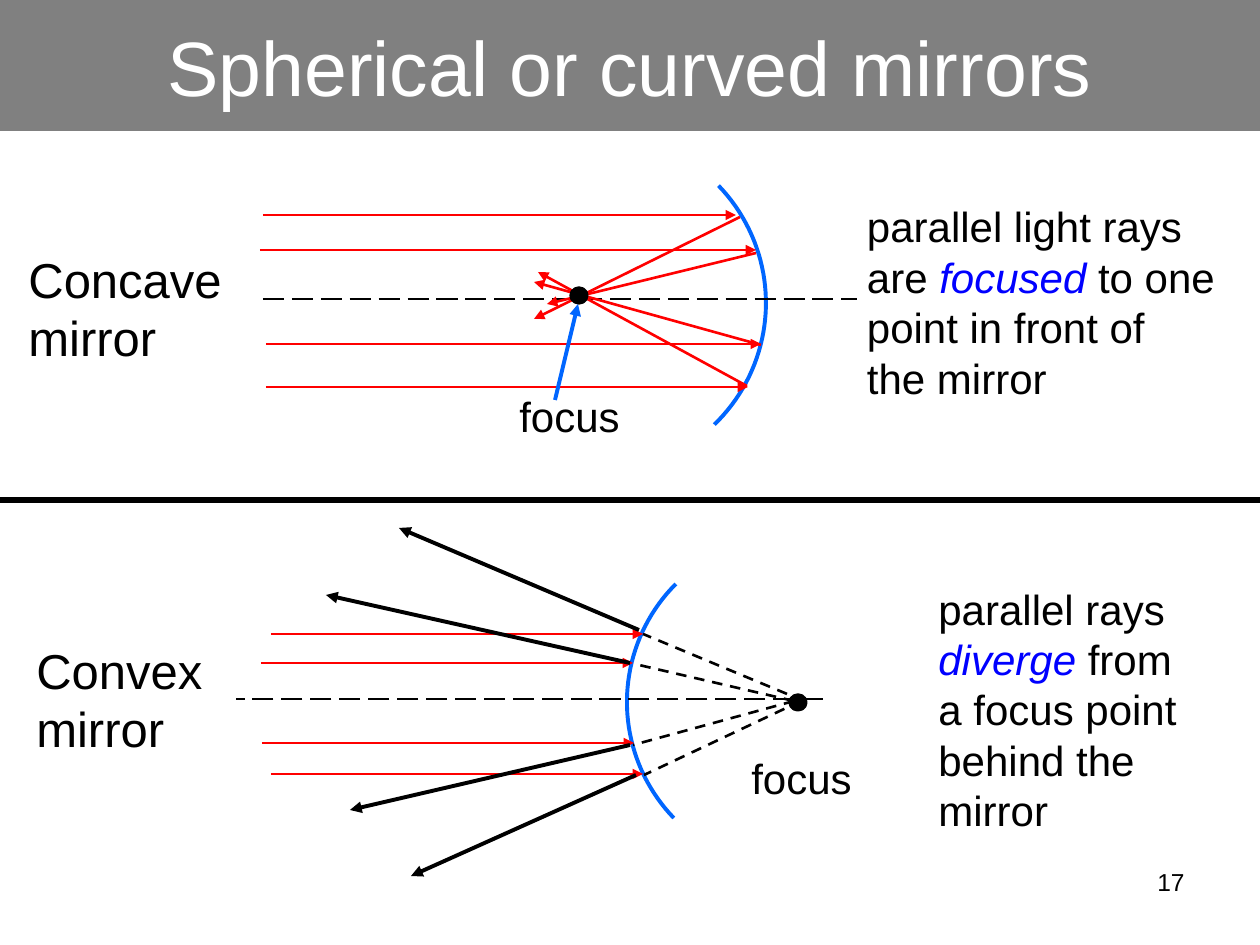
import math

import pptx
import pptx.dml.color
import pptx.enum.dml
import pptx.enum.shapes
import pptx.enum.text
import pptx.oxml.ns
import pptx.util
from lxml import etree

EMU_PER_PX = 914400 / 126
FONT = "Arial"
COLORS = {
    "black": "000000", "white": "FFFFFF", "band": "808080",
    "ray": "FF0000", "mirror": "0066FF", "emphasis": "0000FF",
}
DASH = pptx.enum.dml.MSO_LINE.DASH
LONG_DASH = pptx.enum.dml.MSO_LINE.LONG_DASH
SHAPES = pptx.enum.shapes.MSO_SHAPE
ALIGN = pptx.enum.text.PP_ALIGN
ANCHOR = pptx.enum.text.MSO_ANCHOR

# Rays as (start x, start y, end x, end y)
CONCAVE_RAYS = [
    (263, 215, 736, 215), (740, 217, 534, 319),
    (266, 387, 748, 387), (747, 386, 538, 272),
    (260, 250, 756, 250), (756, 253, 547, 304),
    (266, 344, 761, 344), (761, 345, 534, 282),
]
CONVEX_EXTENSIONS = [
    (804, 701, 643, 634), (801, 701, 644, 775),
    (794, 701, 639, 665), (794, 701, 633, 745),
]
CONVEX_INCOMING = [
    (271, 634, 643, 634), (261, 663, 633, 663),
    (262, 743, 634, 743), (271, 774, 643, 774),
]
CONVEX_REFLECTED = [
    (639, 630, 399, 528), (630, 663, 326, 595),
    (630, 745, 350, 810), (636, 775, 411, 876),
]


def px(value):
    return pptx.util.Emu(round(value * EMU_PER_PX))


def rgb(name):
    return pptx.dml.color.RGBColor.from_string(COLORS[name])


def add_line(slide, ends, color, width=1.5, dash=None, arrow=False):
    connector = slide.shapes.add_connector(
        pptx.enum.shapes.MSO_CONNECTOR.STRAIGHT, *map(px, ends))
    connector.line.color.rgb = rgb(color)
    connector.line.width = pptx.util.Pt(width)
    if dash is not None:
        connector.line.dash_style = dash
    if arrow:
        etree.SubElement(connector.line._get_or_add_ln(),
                         pptx.oxml.ns.qn("a:tailEnd"), type="triangle")
    etree.SubElement(connector._element.spPr, pptx.oxml.ns.qn("a:effectLst"))


def add_mirror(slide, center_x, center_y, radius, start, end):
    """Draw a circular arc between two angles in degrees."""
    steps = 40
    angles = [math.radians(start + (end - start) * step / steps)
              for step in range(steps + 1)]
    points = [(px(center_x + radius * math.cos(angle)),
               px(center_y + radius * math.sin(angle))) for angle in angles]
    builder = slide.shapes.build_freeform(*points[0])
    builder.add_line_segments(points[1:], close=False)
    mirror = builder.convert_to_shape()
    mirror.shadow.inherit = False
    mirror.fill.background()
    mirror.line.color.rgb = rgb("mirror")
    mirror.line.width = pptx.util.Pt(2.25)


def add_focus_point(slide, left, top):
    dot = slide.shapes.add_shape(SHAPES.OVAL, px(left), px(top), px(14), px(13))
    dot.shadow.inherit = False
    dot.fill.solid()
    dot.fill.fore_color.rgb = rgb("black")
    dot.line.color.rgb = rgb("black")
    dot.line.width = pptx.util.Pt(3)


def add_text(slide, box, lines, size, color="black", align=ALIGN.LEFT,
             fill=None, wrap=True, inset=True, anchor=ANCHOR.TOP):
    """Add lines of runs; a run marked with a leading * is emphasised."""
    if fill:
        shape = slide.shapes.add_shape(SHAPES.RECTANGLE, *map(px, box))
        shape.shadow.inherit = False
        shape.fill.solid()
        shape.fill.fore_color.rgb = rgb(fill)
        shape.line.fill.background()
    else:
        shape = slide.shapes.add_textbox(*map(px, box))
    frame = shape.text_frame
    frame.word_wrap = wrap
    frame.vertical_anchor = anchor
    if not inset:
        frame.margin_left = frame.margin_right = 0
        frame.margin_top = frame.margin_bottom = 0
    for index, runs in enumerate(lines):
        paragraph = frame.paragraphs[0] if index == 0 else frame.add_paragraph()
        paragraph.alignment = align
        paragraph.line_spacing = pptx.util.Pt(size * 1.2)
        for text in runs:
            emphasised = text.startswith("*")
            run = paragraph.add_run()
            run.text = text.lstrip("*")
            run.font.name = FONT
            run.font.size = pptx.util.Pt(size)
            run.font.italic = emphasised
            run.font.color.rgb = rgb("emphasis" if emphasised else color)


def add_concave_half(slide):
    add_text(slide, (16, 243, 219, 130), [["Concave"], ["mirror"]], 28, wrap=False)
    add_mirror(slide, 597, 303, 169, -44, 46)
    add_line(slide, (263, 299, 857, 299), "black", dash=LONG_DASH)
    for ray in CONCAVE_RAYS:
        add_line(slide, ray, "ray", arrow=True)
    add_text(slide, (507, 384, 126, 63), [["focus"]], 24, wrap=False)
    add_line(slide, (555, 400, 578, 304), "mirror", 2.25, arrow=True)
    add_focus_point(slide, 572, 289)
    add_text(slide, (867, 201, 363, 204),
             [["parallel light rays are ", "*focused", " to one point in front of"],
              ["the mirror"]], 24, fill="white", inset=False)


def add_convex_half(slide):
    add_text(slide, (24, 634, 192, 130), [["Convex"], ["mirror"]], 28,
             fill="white", wrap=False)
    add_text(slide, (926, 577, 310, 267),
             [["parallel rays"], ["*diverge", " from"], ["a focus point"],
              ["behind the"], ["mirror"]], 24, fill="white")
    add_mirror(slide, 794, 702, 167, 225, 136)
    add_line(slide, (823, 699, 236, 699), "black", dash=LONG_DASH)
    for extension in CONVEX_EXTENSIONS:
        add_line(slide, extension, "black", dash=DASH)
    for ray in CONVEX_INCOMING:
        add_line(slide, ray, "ray", arrow=True)
    for ray in CONVEX_REFLECTED:
        add_line(slide, ray, "black", 2.25, arrow=True)
    add_focus_point(slide, 791, 696)
    add_text(slide, (739, 746, 126, 63), [["focus"]], 24, wrap=False)


def main():
    presentation = pptx.Presentation()
    presentation.slide_width = px(1260)
    presentation.slide_height = px(945)
    slide = presentation.slides.add_slide(presentation.slide_layouts[6])

    # Page number and title band
    add_text(slide, (903, 861, 294, 65), [["17"]], 14, align=ALIGN.RIGHT)
    add_text(slide, (0, 0, 1260, 131), [["Spherical or curved mirrors"]], 44,
             color="white", align=ALIGN.CENTER, fill="band", anchor=ANCHOR.MIDDLE)

    # Two diagrams with a divider between them
    add_concave_half(slide)
    add_line(slide, (0, 500, 1260, 500), "black", 3)
    add_convex_half(slide)

    presentation.save("out.pptx")


if __name__ == "__main__":
    main()
